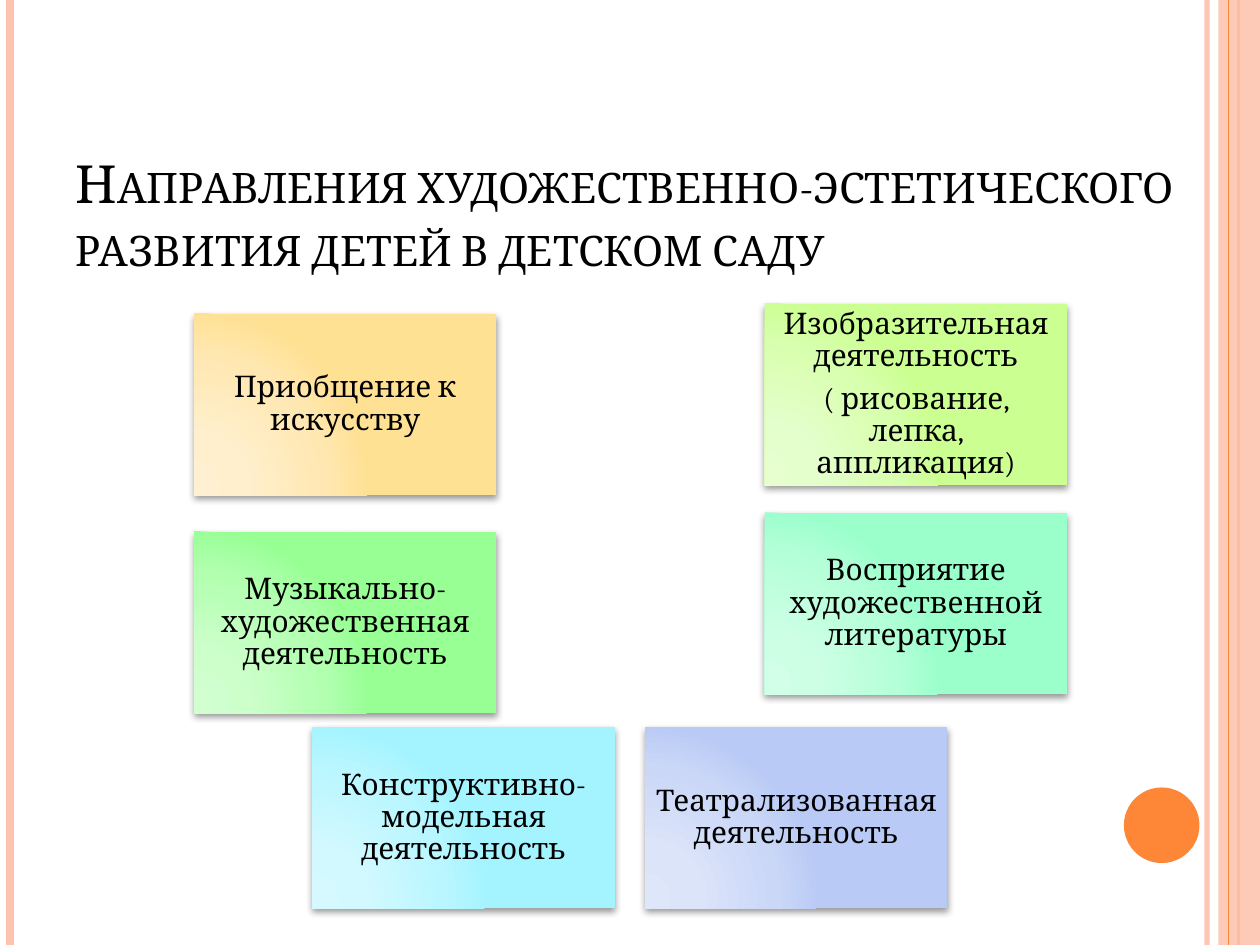
from lxml import etree
from pptx import Presentation
from pptx import util as u
from pptx.dml import color
from pptx.enum import shapes, text
from pptx.oxml import ns

FONT = "Cambria"
PEACH, ORANGE = "FEC3AE", "FE8637"
WIDE, HIGH = 2.4, 1.44
STOPS = (0, 30, 75, 100)

# x, width in points, colour, opacity
RULES = [
    (9.58, 3, PEACH, 93),
    (0.08, 4.5, PEACH, 100),
    (9.83, 1.5, ORANGE, 100),
]

# left, top, gradient colours, paragraphs
CARDS = [
    (1.54, 2.49, "FFF0D1 FFEFCC FFE7B1 FFE193", ["Приобщение к искусству"]),
    (6.07, 2.41, "E7FFCF E4FFCB D8FFAF CCFF92",
     ["Изобразительная деятельность", "( рисование, лепка, аппликация)"]),
    (1.54, 4.22, "D1FFD0 CDFFCB B2FFB0 98FF95",
     ["Музыкально-художественная деятельность"]),
    (6.07, 4.07, "D2FFE7 CDFFE5 B4FFD8 9BFFCC",
     ["Восприятие художественной литературы"]),
    (2.48, 5.77, "D5F9FF D1F9FF BAF6FF A4F4FF",
     ["Конструктивно-модельная деятельность"]),
    (5.12, 5.77, "DEE6FA DBE4F9 CAD7F7 B8CAF5",
     ["Театрализованная деятельность"]),
]


def rgb(code):
    return color.RGBColor.from_string(code)


def node(parent, tag, **attrs):
    """Add a drawing element below parent."""
    item = etree.SubElement(parent, ns.qn(tag))
    for key, value in attrs.items():
        item.set(key, str(value))
    return item


def fade(owner, pct):
    """Set the opacity of the solid fill inside owner."""
    if pct < 100:
        tone = owner.find(".//" + ns.qn("a:srgbClr"))
        node(tone, "a:alpha", val=pct * 1000)


def style(run, size):
    run.font.name = FONT
    run.font.size = u.Pt(size)
    run.font.color.rgb = rgb("000000")


def add_rule(slide, x, width, code, pct):
    rule = slide.shapes.add_connector(
        shapes.MSO_CONNECTOR.STRAIGHT,
        u.Inches(x), 0, u.Inches(x), u.Inches(7.5))
    rule.line.color.rgb = rgb(code)
    rule.line.width = u.Pt(width)
    props = rule._element.spPr
    fade(props, pct)
    node(props, "a:effectLst")


def add_block(slide, kind, box, code, pct=100):
    block = slide.shapes.add_shape(kind, *map(u.Inches, box))
    block.shadow.inherit = False
    block.fill.solid()
    block.fill.fore_color.rgb = rgb(code)
    block.line.fill.background()
    fade(block._element.spPr, pct)
    return block


def add_glow(card, codes):
    """Swap the plain fill for a round gradient from the lower left."""
    props = card._element.spPr
    plain = props.find(ns.qn("a:solidFill"))
    grad = etree.Element(ns.qn("a:gradFill"), rotWithShape="1")
    stops = node(grad, "a:gsLst")
    for pos, code in zip(STOPS, codes):
        node(node(stops, "a:gs", pos=pos * 1000), "a:srgbClr", val=code)
    round_ = node(grad, "a:path", path="circle")
    node(round_, "a:fillToRect", l=5000, t=100000, r=120000, b=10000)
    props.replace(plain, grad)


def add_shade(card):
    """Soft shadow straight below the card."""
    effects = card._element.spPr.find(ns.qn("a:effectLst"))
    shade = node(effects, "a:outerShdw", blurRad=u.Pt(4), dist=u.Pt(2),
                 dir=90 * 60000, rotWithShape=0)
    tone = node(shade, "a:srgbClr", val="000000")
    node(tone, "a:alpha", val=40000)


def add_card(slide, left, top, codes, lines):
    tones = codes.split()
    card = add_block(slide, shapes.MSO_SHAPE.RECTANGLE,
                     (left, top, WIDE, HIGH), tones[-1])
    add_glow(card, tones)
    add_shade(card)
    frame = card.text_frame
    frame.word_wrap = True
    frame.vertical_anchor = text.MSO_ANCHOR.MIDDLE
    frame.margin_left = frame.margin_right = u.Inches(0.07)
    frame.margin_top = frame.margin_bottom = u.Inches(0.07)
    frame.text = "\n".join(lines)
    for para in frame.paragraphs:
        para.alignment = text.PP_ALIGN.CENTER
        para.line_spacing = 0.9
        para.space_after = u.Pt(6)
        style(para.runs[0], 17)


def set_title(slide):
    title = slide.shapes.title
    title.left, title.top = u.Inches(0.5), u.Inches(0.37)
    title.width, title.height = u.Inches(8.99), u.Inches(1.88)
    frame = title.text_frame
    frame.text = ("Направления художественно-эстетического "
                  "развития детей в детском саду")
    frame.word_wrap = True
    frame.auto_size = text.MSO_AUTO_SIZE.NONE
    frame.vertical_anchor = text.MSO_ANCHOR.BOTTOM
    para = frame.paragraphs[0]
    para.alignment = text.PP_ALIGN.LEFT
    run = para.runs[0]
    style(run, 30)
    run.font._element.set("cap", "small")


def main():
    deck = Presentation()
    deck.slide_width, deck.slide_height = u.Inches(10), u.Inches(7.5)
    slide = deck.slides.add_slide(deck.slide_layouts[5])

    # Side stripes and dot
    for rule in RULES:
        add_rule(slide, *rule)
    add_block(slide, shapes.MSO_SHAPE.RECTANGLE, (9.67, 0, 0.33, 7.5),
              PEACH, 87)
    add_rule(slide, 9.75, 0.75, ORANGE, 100)
    add_block(slide, shapes.MSO_SHAPE.OVAL, (8.92, 6.25, 0.6, 0.6), ORANGE)

    # Heading and cards
    set_title(slide)
    for card in CARDS:
        add_card(slide, *card)

    deck.save("out.pptx")


if __name__ == "__main__":
    main()
